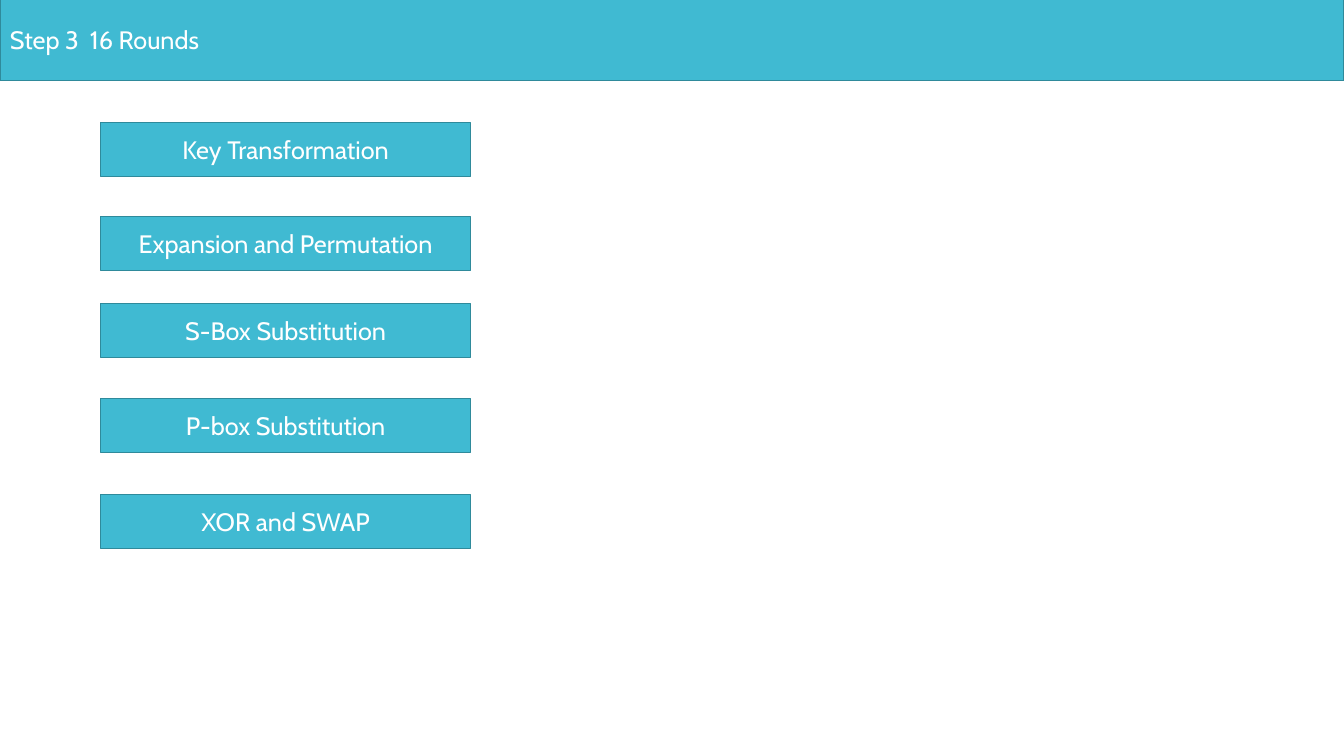
from lxml.etree import SubElement
from pptx import Presentation
from pptx.dml.color import RGBColor
from pptx.enum.shapes import MSO_SHAPE
from pptx.enum.text import MSO_ANCHOR, PP_ALIGN
from pptx.oxml.ns import qn
from pptx.util import Pt

TITLE = "Step 3\t16 Rounds"
ROUND_STEPS = [
    ("Key Transformation", 87.7),
    ("Expansion and Permutation", 154.9),
    ("S-Box Substitution", 216.7),
    ("P-box Substitution", 284.5),
    ("XOR and SWAP", 353.3),
]

TEAL = RGBColor(0x40, 0xBA, 0xD2)
DARK_TEAL = RGBColor(0x2F, 0x8A, 0x9B)
WHITE = RGBColor(0xFF, 0xFF, 0xFF)

SLIDE_WIDTH, SLIDE_HEIGHT = 960, 540
TITLE_TOP, TITLE_HEIGHT = -1.3, 59
TITLE_TAB = 57.1
STEP_LEFT, STEP_WIDTH, STEP_HEIGHT = 72, 264, 38.5


def add_box(slide, text, left, top, width, height, align=PP_ALIGN.CENTER, tab=None):
    box = slide.shapes.add_shape(
        MSO_SHAPE.RECTANGLE, Pt(left), Pt(top), Pt(width), Pt(height)
    )
    box.shadow.inherit = False
    box.fill.solid()
    box.fill.fore_color.rgb = TEAL
    box.line.color.rgb = DARK_TEAL
    box.line.width = Pt(0.85)
    frame = box.text_frame
    frame.word_wrap = True
    frame.vertical_anchor = MSO_ANCHOR.MIDDLE
    paragraph = frame.paragraphs[0]
    paragraph.alignment = align
    if tab is not None:
        tabs = SubElement(paragraph._p.get_or_add_pPr(), qn("a:tabLst"))
        SubElement(tabs, qn("a:tab"), pos=str(Pt(tab)), algn="l")
    run = paragraph.add_run()
    run.text = text
    run.font.name = "Cabin"
    run.font.size = Pt(18)
    run.font.color.rgb = WHITE


def main():
    deck = Presentation()
    deck.slide_width, deck.slide_height = Pt(SLIDE_WIDTH), Pt(SLIDE_HEIGHT)
    slide = deck.slides.add_slide(deck.slide_layouts[6])
    add_box(slide, TITLE, 0, TITLE_TOP, SLIDE_WIDTH, TITLE_HEIGHT,
            align=PP_ALIGN.LEFT, tab=TITLE_TAB)
    for step, top in ROUND_STEPS:
        add_box(slide, step, STEP_LEFT, top, STEP_WIDTH, STEP_HEIGHT)
    deck.save("out.pptx")


if __name__ == "__main__":
    main()
